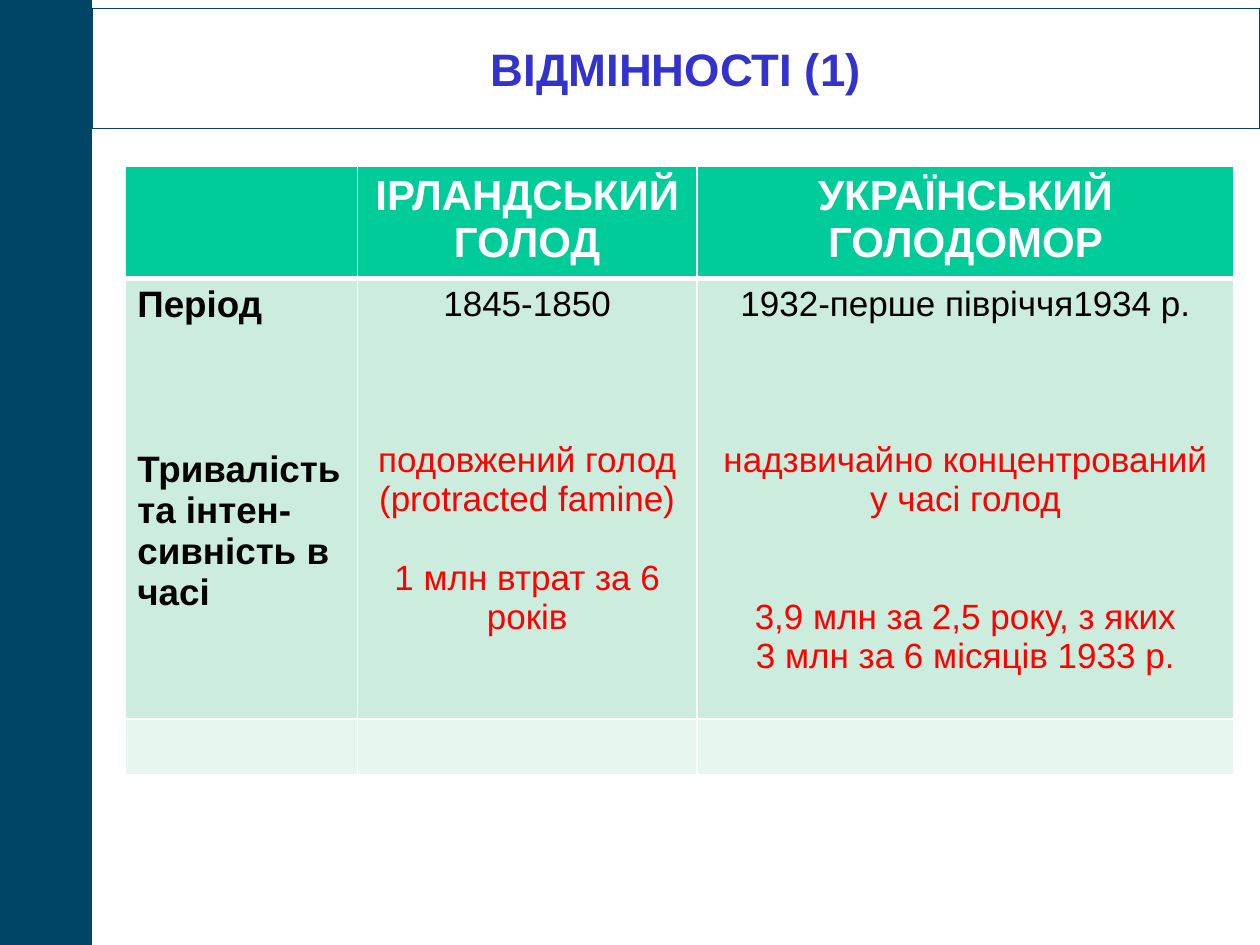
from pptx import Presentation
from pptx.dml.color import RGBColor
from pptx.enum.shapes import MSO_SHAPE
from pptx.enum.text import MSO_ANCHOR, PP_ALIGN
from pptx.oxml.ns import qn
from pptx.util import Pt
from lxml.etree import SubElement

THEME = {
    "font": "Arial",
    "navy": "004466", "blue": "3333CC", "white": "FFFFFF",
    "black": "000000", "red": "FF0000",
    "rows": ["00CC99", "CCECDE", "E7F6EF"],
    "title": 26, "head": 24, "label": 21, "body": 20,
}

TITLE = "ВІДМІННОСТІ (1)"
HEADS = ["", "ІРЛАНДСЬКИЙ ГОЛОД", "УКРАЇНСЬКИЙ ГОЛОДОМОР"]
# Each entry: text, blank lines of space above it, colour
LABELS = [
    ("Період", 0, "black"),
    ("Тривалість та інтен-сивність в часі", 3, "black"),
]
IRISH = [
    ("1845-1850", 0, "black"),
    ("подовжений голод (protracted famine)", 3, "red"),
    ("1 млн втрат за 6 років", 1, "red"),
]
UKRAINE = [
    ("1932-перше півріччя1934 р.", 0, "black"),
    ("надзвичайно концентрований", 3, "red"),
    ("у часі голод", 0, "red"),
    ("3,9 млн за 2,5 року, з яких", 2, "red"),
    ("3 млн за 6 місяців 1933 р.", 0, "red"),
]

WIDE, HIGH = 720, 540
BAR = 52.5
LEFT, TOP = 71.3, 95
COLS = [133, 194, 307]
ROWS = [64, 252, 32]
LINE = 1.12  # line height relative to type size


def color(name):
    return RGBColor.from_string(THEME.get(name, name))


def style(para, size, hue, bold=False, align=PP_ALIGN.CENTER):
    para.alignment = align
    font = para.font
    font.name, font.size, font.bold = THEME["font"], Pt(THEME[size]), bold
    font.color.rgb = color(hue)


def edge(cell, low):
    """Draw white borders around a cell, the lower one being low points wide."""
    props = cell._tc.get_or_add_tcPr()
    sides = [("a:lnL", 1), ("a:lnR", 1), ("a:lnT", 1), ("a:lnB", low)]
    for spot, (tag, width) in enumerate(sides):
        line = SubElement(props, qn(tag), w=str(Pt(width)))
        fill = SubElement(line, qn("a:solidFill"))
        SubElement(fill, qn("a:srgbClr"), val=THEME["white"])
        props.remove(line)
        props.insert(spot, line)


def write(cell, items, size, bold, align):
    frame = cell.text_frame
    for i, (text, gap, hue) in enumerate(items):
        para = frame.add_paragraph() if i else frame.paragraphs[0]
        para.text = text
        para.space_before = Pt(round(gap * THEME[size] * LINE, 1))
        style(para, size, hue, bold, align)


def add_title(slide):
    title = slide.shapes.title
    title.left, title.top = Pt(BAR), Pt(5)
    title.width, title.height = Pt(WIDE - BAR), Pt(68.5)
    title.fill.solid()
    title.fill.fore_color.rgb = color("white")
    title.line.color.rgb = color("navy")
    title.line.width = Pt(0.75)
    frame = title.text_frame
    frame.text = TITLE
    frame.word_wrap = False
    frame.vertical_anchor = MSO_ANCHOR.MIDDLE
    style(frame.paragraphs[0], "title", "blue", True)


def add_bar(slide):
    bar = slide.shapes.add_shape(MSO_SHAPE.RECTANGLE, 0, 0, Pt(BAR), Pt(HIGH))
    bar.shadow.inherit = False
    bar.fill.solid()
    bar.fill.fore_color.rgb = color("navy")
    bar.line.fill.background()


def add_grid(slide):
    table = slide.shapes.add_table(
        len(ROWS), len(COLS), Pt(LEFT), Pt(TOP), Pt(sum(COLS)), Pt(sum(ROWS))
    ).table
    for col, width in zip(table.columns, COLS):
        col.width = Pt(width)
    for r, (row, height) in enumerate(zip(table.rows, ROWS)):
        row.height = Pt(height)
        for cell in row.cells:
            cell.fill.solid()
            cell.fill.fore_color.rgb = color(THEME["rows"][r])
            edge(cell, 1 if r else 3)

    mid = PP_ALIGN.CENTER
    for c, head in enumerate(HEADS):
        if head:
            write(table.cell(0, c), [(head, 0, "white")], "head", True, mid)
    write(table.cell(1, 0), LABELS, "label", True, PP_ALIGN.LEFT)
    write(table.cell(1, 1), IRISH, "body", False, mid)
    write(table.cell(1, 2), UKRAINE, "body", False, mid)


def main():
    deck = Presentation()
    deck.slide_width, deck.slide_height = Pt(WIDE), Pt(HIGH)
    slide = deck.slides.add_slide(deck.slide_layouts.get_by_name("Title Only"))
    add_bar(slide)
    add_title(slide)
    add_grid(slide)
    deck.save("out.pptx")


if __name__ == "__main__":
    main()
